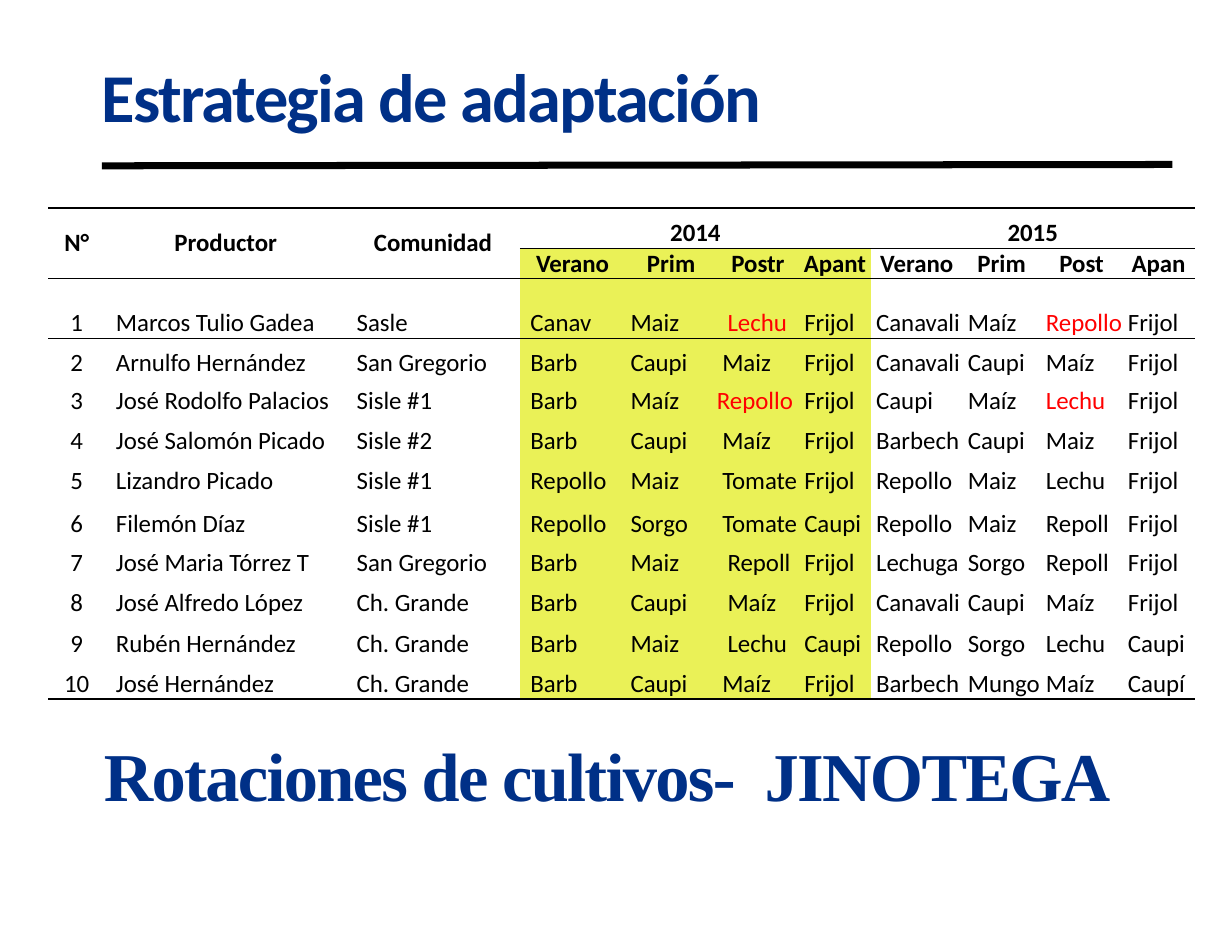
from dataclasses import dataclass

from lxml import etree
from pptx import Presentation
from pptx.dml.color import RGBColor
from pptx.enum.shapes import MSO_CONNECTOR
from pptx.enum.text import MSO_ANCHOR, PP_ALIGN
from pptx.oxml.ns import qn
from pptx.util import Cm, Pt

LEFT, CENTER = PP_ALIGN.LEFT, PP_ALIGN.CENTER
BOTTOM, MIDDLE = MSO_ANCHOR.BOTTOM, MSO_ANCHOR.MIDDLE
STRAIGHT = MSO_CONNECTOR.STRAIGHT
NO_STYLE = "{2D5ABB26-0587-4C30-8999-92F81FD0307C}"
NAVY, BLACK, RED, YELLOW = "003087", "000000", "FF0000", "EAF157"
INDENT = 0.12
COLUMN_WIDTHS = (1.3, 5.46, 3.94, 2.39, 2.08, 1.86, 1.63, 2.08, 1.77, 1.86, 1.63)
ROW_HEIGHTS = (0.91, 0.67, 1.35, 0.91, 0.86, 0.91, 0.91, 0.97, 0.89, 0.91, 0.91, 0.91)
COLUMN_INDENTS = (0, 2, 2, 2, 1, 1, 1, 1, 1, 1, 1)
POSTR, YEAR_2014, YEAR_2015 = 5, 3, 7
FIXED_HEADINGS = ("N°", "Productor", "Comunidad")
SEASONS = ("Verano", "Prim", "Postr", "Apant", "Verano", "Prim", "Post", "Apan")


@dataclass
class Heading:
    text: str
    left: float
    top: float
    width: float
    height: float
    font: str
    align: PP_ALIGN


@dataclass
class Producer:
    name: str
    community: str
    crops: str
    postr_indent: int = 1
    red: tuple[int, ...] = ()


HEADINGS = (
    Heading("Rotaciones de cultivos-  JINOTEGA", 0.76, 16.18, 26.31, 2.31, "Times New Roman", CENTER),
    Heading("Estrategia de adaptación", 2.31, -0.03, 22.94, 3.12, "Calibri", LEFT),
)
PRODUCERS = (
    Producer("Marcos Tulio Gadea", "Sasle", "Canav Maiz Lechu Frijol Canavali Maíz Repollo Frijol", 2, (5, 9)),
    Producer("Arnulfo Hernández", "San Gregorio", "Barb Caupi Maiz Frijol Canavali Caupi Maíz Frijol"),
    Producer("José Rodolfo Palacios", "Sisle #1", "Barb Maíz Repollo Frijol Caupi Maíz Lechu Frijol", 0, (5, 9)),
    Producer("José Salomón Picado", "Sisle #2", "Barb Caupi Maíz Frijol Barbech Caupi Maiz Frijol"),
    Producer("Lizandro Picado", "Sisle #1", "Repollo Maiz Tomate Frijol Repollo Maiz Lechu Frijol"),
    Producer("Filemón Díaz", "Sisle #1", "Repollo Sorgo Tomate Caupi Repollo Maiz Repoll Frijol"),
    Producer("José Maria Tórrez T", "San Gregorio", "Barb Maiz Repoll Frijol Lechuga Sorgo Repoll Frijol", 2),
    Producer("José Alfredo López", "Ch. Grande", "Barb Caupi Maíz Frijol Canavali Caupi Maíz Frijol", 2),
    Producer("Rubén Hernández", "Ch. Grande", "Barb Maiz Lechu Caupi Repollo Sorgo Lechu Caupi", 2),
    Producer("José Hernández", "Ch. Grande", "Barb Caupi Maíz Frijol Barbech Mungo Maíz Caupí"),
)


def rgb(value: str) -> RGBColor:
    """Turn a hex string into a colour."""
    return RGBColor.from_string(value)


def set_font(p, name: str, size: float, color: str, bold: bool) -> None:
    """Set the font of a whole paragraph."""
    p.font.name, p.font.size, p.font.bold = name, Pt(size), bold
    p.font.color.rgb = rgb(color)


def add_heading(s, h: Heading) -> None:
    """Draw a large navy heading."""
    tf = s.shapes.add_textbox(Cm(h.left), Cm(h.top), Cm(h.width), Cm(h.height)).text_frame
    tf.word_wrap, tf.vertical_anchor = True, BOTTOM
    tf.margin_left = tf.margin_top = tf.margin_bottom = 0
    tf.margin_right = Cm(0.28)
    p = tf.paragraphs[0]
    p.alignment = h.align
    r = p.add_run()
    r.text = h.text
    r.font._element.set("spc", "-110")
    set_font(p, h.font, 44, NAVY, True)


def add_rule(s) -> None:
    """Draw the thick rule under the top heading."""
    line = s.shapes.add_connector(STRAIGHT, Cm(2.31), Cm(3.76), Cm(26.59), Cm(3.73))
    line.line.color.rgb, line.line.width = rgb(BLACK), Pt(4.5)
    etree.SubElement(line._element.spPr, qn("a:effectLst"))


def set_borders(cell, tags: tuple[str, ...]) -> None:
    """Add thin black borders to the given sides of a cell."""
    tc_pr = cell._tc.get_or_add_tcPr()
    for tag in tags:
        ln = etree.SubElement(tc_pr, qn(tag), w=str(Pt(1)))
        fill = etree.SubElement(ln, qn("a:solidFill"))
        etree.SubElement(fill, qn("a:srgbClr"), val=BLACK)


def write_cell(cell, text: str, align: PP_ALIGN = CENTER, anchor: MSO_ANCHOR = BOTTOM,
               indent: int = 0, color: str = BLACK, bold: bool = True) -> None:
    """Write one line of text in a cell."""
    cell.vertical_anchor = anchor
    cell.margin_left = Cm(INDENT * indent)
    p = cell.text_frame.paragraphs[0]
    p.alignment = align
    p.add_run().text = text
    set_font(p, "Calibri", 16, color, bold)


def style_grid(table) -> None:
    """Set sizes, margins, borders and fills of every cell."""
    for column, width in zip(table.columns, COLUMN_WIDTHS):
        column.width = Cm(width)
    last = len(ROW_HEIGHTS) - 1
    for i, height in enumerate(ROW_HEIGHTS):
        table.rows[i].height = Cm(height)
        for j in range(len(COLUMN_WIDTHS)):
            cell = table.cell(i, j)
            cell.margin_left = cell.margin_right = cell.margin_top = cell.margin_bottom = 0
            top = i in (0, 2) or (i == 1 and j >= YEAR_2014)
            sides = (("a:lnT", top), ("a:lnB", i in (0, 1, last)))
            set_borders(cell, tuple(tag for tag, shown in sides if shown))
            if i > 0 and YEAR_2014 <= j < YEAR_2015:
                cell.fill.solid()
                cell.fill.fore_color.rgb = rgb(YELLOW)
            else:
                cell.fill.background()


def write_headers(table) -> None:
    """Merge and write the two header rows."""
    for j, text in enumerate(FIXED_HEADINGS):
        table.cell(0, j).merge(table.cell(1, j))
        write_cell(table.cell(0, j), text, anchor=MIDDLE)
    for text, j in (("2014", YEAR_2014), ("2015", YEAR_2015)):
        table.cell(0, j).merge(table.cell(0, j + 3))
        write_cell(table.cell(0, j), text)
    for j, text in enumerate(SEASONS, YEAR_2014):
        write_cell(table.cell(1, j), text)


def write_producer(table, number: int, producer: Producer) -> None:
    """Write the row of one producer."""
    texts = (str(number), producer.name, producer.community, *producer.crops.split())
    for j, text in enumerate(texts):
        write_cell(table.cell(number + 1, j), text, LEFT if j else CENTER,
                   indent=producer.postr_indent if j == POSTR else COLUMN_INDENTS[j],
                   color=RED if j in producer.red else BLACK, bold=False)


def add_rotation_table(s) -> None:
    """Draw the crop rotation table."""
    frame = s.shapes.add_table(len(ROW_HEIGHTS), len(COLUMN_WIDTHS), Cm(1.09), Cm(4.72),
                               Cm(sum(COLUMN_WIDTHS)), Cm(sum(ROW_HEIGHTS)))
    table = frame.table
    table.first_row = table.horz_banding = False
    table._tbl.tblPr.find(qn("a:tableStyleId")).text = NO_STYLE
    style_grid(table)
    write_headers(table)
    for number, producer in enumerate(PRODUCERS, 1):
        write_producer(table, number, producer)


def main() -> None:
    """Build and save the slide."""
    prs = Presentation()
    prs.slide_width, prs.slide_height = Cm(27.94), Cm(21.59)
    s = prs.slides.add_slide(prs.slide_layouts[6])
    add_rotation_table(s)
    for heading in HEADINGS:
        add_heading(s, heading)
    add_rule(s)
    prs.save("out.pptx")


if __name__ == "__main__":
    main()
